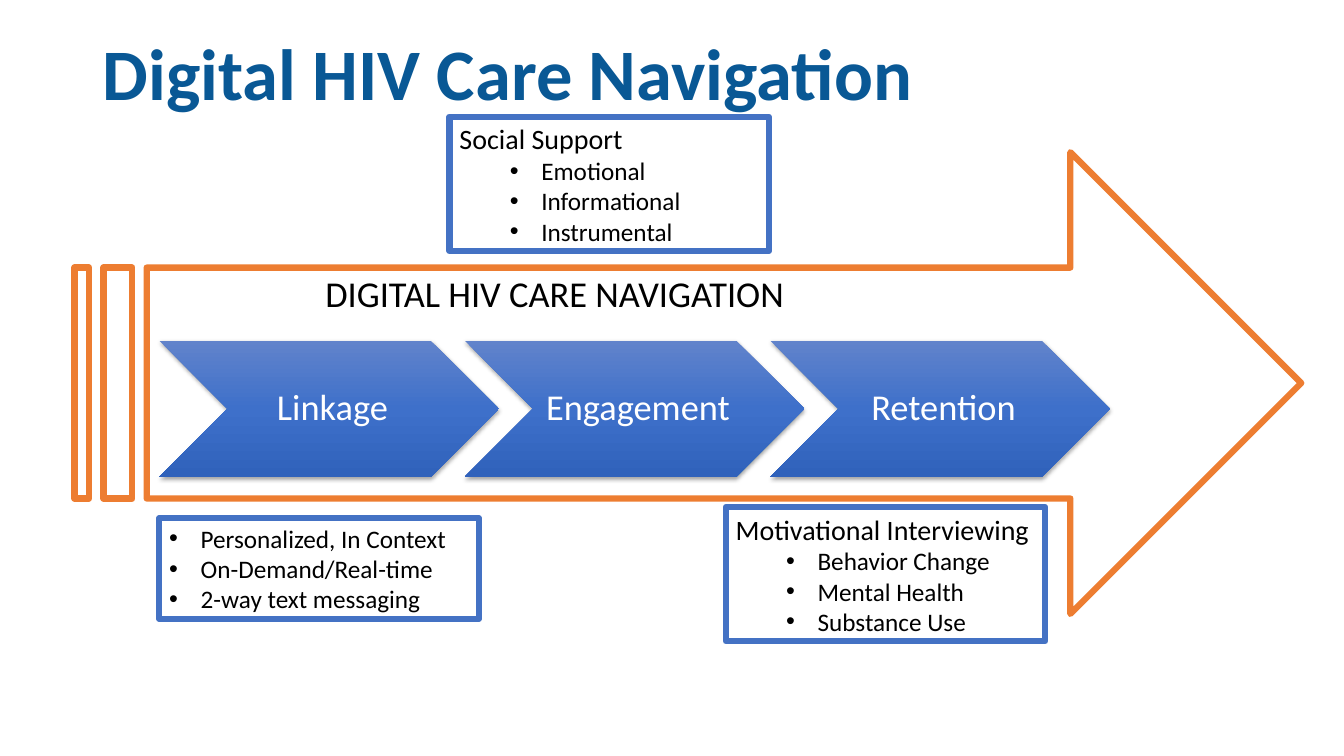
import copy

import pptx
import pptx.chart.data
import pptx.dml.color
import pptx.enum.shapes
import pptx.enum.text
import pptx.oxml
import pptx.oxml.ns
import pptx.util

Pt = pptx.util.Pt
SHAPES = pptx.enum.shapes.MSO_SHAPE
ALIGN = pptx.enum.text.PP_ALIGN
ANCHOR = pptx.enum.text.MSO_ANCHOR
qn = pptx.oxml.ns.qn
NAMESPACE = pptx.oxml.ns.nsdecls("a")


def color(value):
    """Return the RGB colour for a hex string."""
    return pptx.dml.color.RGBColor.from_string(value)


def set_font(para, size, value="000000", bold=False):
    """Format the text of a paragraph."""
    para.font.name = "Calibri"
    para.font.size = Pt(size)
    para.font.bold = bold
    para.font.color.rgb = color(value)


def add_bullet(para, indent, hanging):
    """Give a paragraph a round bullet with a hanging indent."""
    properties = para._p.get_or_add_pPr()
    properties.set("marL", str(Pt(indent)))
    properties.set("indent", str(-Pt(hanging)))
    for xml in (
        f'<a:buClr {NAMESPACE}><a:srgbClr val="000000"/></a:buClr>',
        f'<a:buFont {NAMESPACE} typeface="Arial"/>',
        f'<a:buChar {NAMESPACE} char="•"/>',
    ):
        properties.append(pptx.oxml.parse_xml(xml))


def add_shape(page, kind, box, line=None):
    """Add an unfilled preset shape with an optional thick outline."""
    shape = page.shapes.add_shape(kind, *map(Pt, box))
    shape.shadow.inherit = False
    shape.fill.background()
    if line:
        shape.line.color.rgb = color(line)
        shape.line.width = Pt(4.5)
    else:
        shape.line.fill.background()
    return shape


def shade(shape, stops):
    """Fill a shape from top to bottom and give it a soft shadow."""
    shape.fill.gradient()
    shape.fill.gradient_angle = 270
    properties = shape._element.spPr
    stop_list = properties.find(".//" + qn("a:gsLst"))
    stop_list.insert(1, copy.deepcopy(stop_list[0]))
    for stop, (position, value) in zip(shape.fill.gradient_stops, stops):
        stop.position = position
        stop.color.rgb = color(value)
    properties.find(qn("a:effectLst")).append(pptx.oxml.parse_xml(
        f'<a:outerShdw {NAMESPACE} blurRad="{Pt(3.1)}" dist="{Pt(1.8)}" dir="5400000" rotWithShape="0">'
        '<a:srgbClr val="000000"><a:alpha val="35000"/></a:srgbClr></a:outerShdw>'
    ))


def add_title(page, box, text):
    """Place the slide title."""
    title = page.shapes.title
    title.left, title.top, title.width, title.height = map(Pt, box)
    frame = title.text_frame
    frame.text = text
    frame.auto_size = pptx.enum.text.MSO_AUTO_SIZE.NONE
    frame.vertical_anchor = ANCHOR.MIDDLE
    para = frame.paragraphs[0]
    para.alignment = ALIGN.LEFT
    para.line_spacing = 0.9
    set_font(para, 51.8, "095895", bold=True)


def add_stages(page, box, stages):
    """Place a row of overlapping chevrons, each nine tenths of its width apart."""
    left, top, width, height = box
    chevron_width = width / (1 + 0.9 * (len(stages) - 1))
    for index, stage in enumerate(stages):
        place = (left + 0.9 * chevron_width * index, top, chevron_width, height)
        chevron = add_shape(page, SHAPES.CHEVRON, place)
        shade(chevron, [(0, "6183CB"), (0.5, "3E70CA"), (1, "3062BB")])
        frame = chevron.text_frame
        frame.vertical_anchor = ANCHOR.MIDDLE
        frame.margin_left = Pt(8)
        frame.margin_top = frame.margin_right = frame.margin_bottom = Pt(3)
        frame.text = stage
        para = frame.paragraphs[0]
        para.alignment = ALIGN.CENTER
        para.line_spacing = 0.9
        para.space_after = Pt(9.1)
        set_font(para, 26, "FFFFFF")


def add_arrow(page, box, text):
    """Place the striped arrow and the heading inside it."""
    left, top, width, height = box
    add_shape(page, SHAPES.STRIPED_RIGHT_ARROW, box, "ED7D31")
    label = page.shapes.add_textbox(Pt(left + 114.5), Pt(top + 81.4), Pt(457.2), Pt(38.2))
    label.text_frame.word_wrap = True
    label.text_frame.text = text
    para = label.text_frame.paragraphs[0]
    para.alignment = ALIGN.CENTER
    set_font(para, 26)


def add_note(page, box, items, heading=None):
    """Place a framed bullet list, indented further when it has a heading."""
    note = add_shape(page, SHAPES.RECTANGLE, box, "4472C4")
    note.fill.solid()
    note.fill.fore_color.rgb = color("FFFFFF")
    frame = note.text_frame
    frame.vertical_anchor = ANCHOR.TOP
    frame.text = "\n".join([heading, *items] if heading else items)
    for para in frame.paragraphs:
        para.alignment = ALIGN.LEFT
        if para.text == heading:
            set_font(para, 20)
            continue
        para.level = 1 if heading else 0
        add_bullet(para, 58.5 if heading else 22.5, 22.5)
        set_font(para, 18)


def main():
    """Build the deck and save it."""
    deck = pptx.Presentation()
    deck.slide_width, deck.slide_height = Pt(960), Pt(540)
    page = deck.slides.add_slide(deck.slide_layouts[5])
    add_stages(page, (113.8, 243.4, 679, 97.2), ["Linkage", "Engagement", "Retention"])
    add_arrow(page, (53.3, 108.7, 876.2, 329.8), "DIGITAL HIV CARE NAVIGATION")
    add_title(page, (66.2, 22.3, 828, 65.5), "Digital HIV Care Navigation")
    add_note(page, (113.8, 370.1, 228.2, 72),
             ["Personalized, In Context", "On-Demand/Real-time", "2-way text messaging"])
    add_note(page, (321.1, 83.5, 228.2, 95.8),
             ["Emotional", "Informational", "Instrumental"], "Social Support")
    add_note(page, (518.4, 362.2, 228.2, 95.8),
             ["Behavior Change", "Mental Health", "Substance Use"], "Motivational Interviewing")
    deck.save("out.pptx")


if __name__ == "__main__":
    main()
